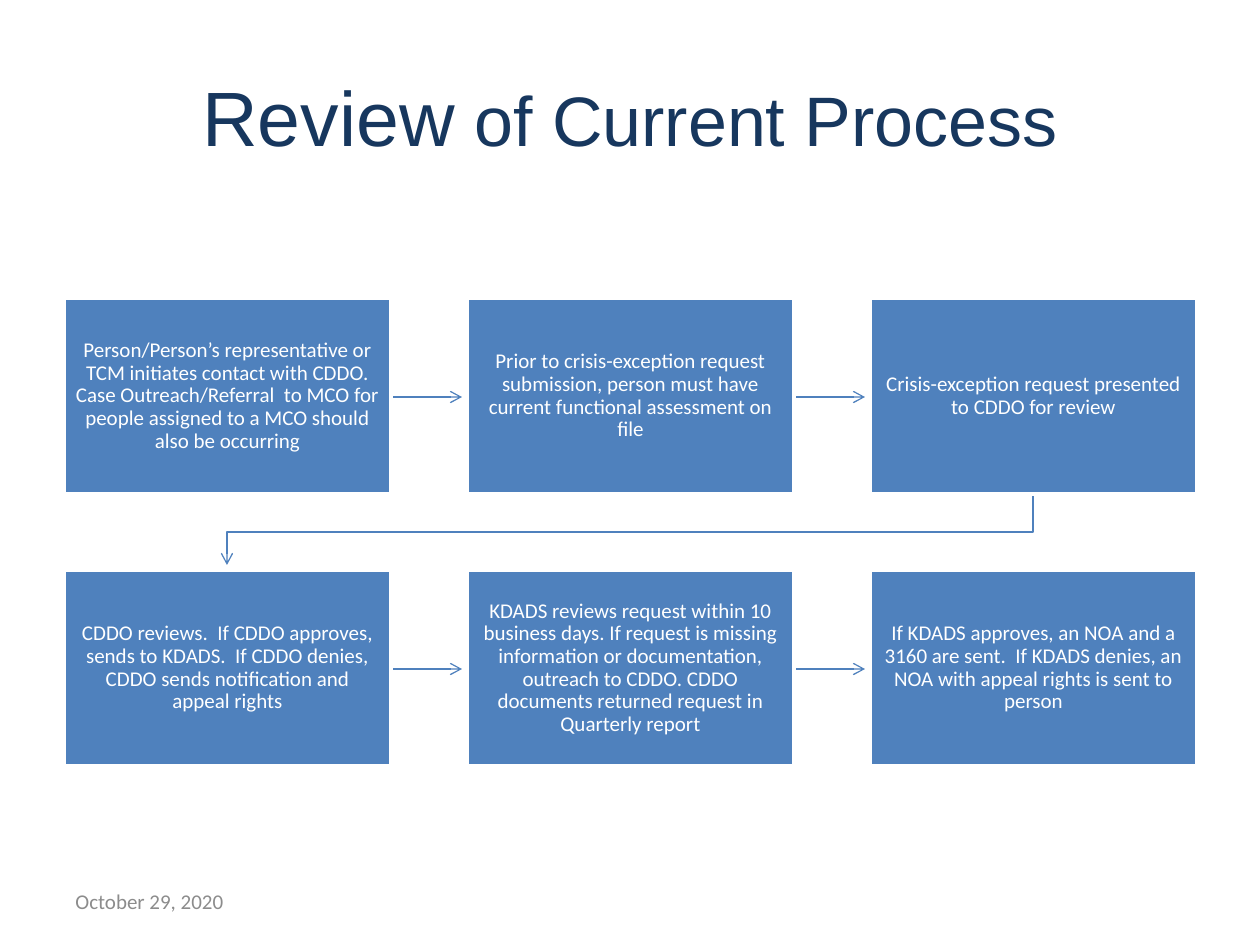
from dataclasses import dataclass

from pptx import Presentation
from pptx.dml.color import RGBColor
from pptx.enum.shapes import MSO_CONNECTOR as Connector, MSO_SHAPE as Shape
from pptx.enum.text import MSO_ANCHOR as Anchor, PP_ALIGN as Align
from pptx.oxml.ns import qn
from pptx.util import Emu, Pt
from lxml.etree import SubElement

PX_PER_INCH = 126
BLUE, NAVY, GREY, WHITE = "4F81BD", "17375E", "8C8C8C", "FFFFFF"

# Grid of steps, in px
COLUMNS = 3
LEFT, TOP = 64, 298
STEP_WIDTH, STEP_HEIGHT = 327, 196
COLUMN_PITCH, ROW_PITCH = 403, 272
ARROW_LENGTH = 71


@dataclass
class Step:
    index: int
    text: str

    @property
    def column(self) -> int:
        return self.index % COLUMNS

    @property
    def left(self) -> int:
        return LEFT + self.column * COLUMN_PITCH

    @property
    def top(self) -> int:
        return TOP + self.index // COLUMNS * ROW_PITCH

    @property
    def middle(self) -> int:
        return self.left + STEP_WIDTH // 2


STEP_TEXTS = [
    "Person/Person’s representative or TCM initiates contact with CDDO. "
    "Case Outreach/Referral  to MCO for people assigned to a MCO should also be occurring",
    "Prior to crisis-exception request submission, person must have "
    "current functional assessment on file",
    "Crisis-exception request presented to CDDO for review",
    "CDDO reviews.  If CDDO approves, sends to KDADS.  If CDDO denies, "
    "CDDO sends notification and appeal rights",
    "KDADS reviews request within 10 business days. If request is missing information "
    "or documentation, outreach to CDDO. CDDO documents returned request in Quarterly report",
    "If KDADS approves, an NOA and a 3160 are sent.  If KDADS denies, "
    "an NOA with appeal rights is sent to person",
]


def px(length: int) -> Emu:
    return Emu(round(length * 914400 / PX_PER_INCH))


def color(value: str) -> RGBColor:
    return RGBColor.from_string(value)


def add_span(para, text: str, *, size: int, fill: str, font: str = "Calibri") -> None:
    span = para.add_run()
    span.text = text
    span.font.size = Pt(size)
    span.font.name = font
    span.font.color.rgb = color(fill)


def prepare_frame(frame, align: Align):
    frame.word_wrap = True
    frame.vertical_anchor = Anchor.MIDDLE
    para = frame.paragraphs[0]
    para.alignment = align
    return para


def add_text_box(page, left: int, top: int, width: int, height: int, align: Align):
    box = page.shapes.add_textbox(px(left), px(top), px(width), px(height))
    return prepare_frame(box.text_frame, align)


def style_arrow(arrow) -> None:
    arrow.line.color.rgb = color(BLUE)
    arrow.line.width = Pt(0.75)
    properties = arrow.element.spPr
    SubElement(properties.find(qn("a:ln")), qn("a:tailEnd"), type="arrow")
    if properties.find(qn("a:effectLst")) is None:
        SubElement(properties, qn("a:effectLst"))


def add_straight_arrow(page, step: Step) -> None:
    start = step.left + STEP_WIDTH
    y = px(step.top + STEP_HEIGHT // 2 + 1)
    style_arrow(page.shapes.add_connector(
        Connector.STRAIGHT, px(start), y, px(start + ARROW_LENGTH), y))


def add_row_arrow(page, source: Step, target: Step) -> None:
    bottom = source.top + STEP_HEIGHT
    bend = (bottom + target.top) // 2
    points = [(source.middle, bend), (target.middle, bend), (target.middle, target.top - 5)]
    builder = page.shapes.build_freeform(px(source.middle), px(bottom))
    builder.add_line_segments([(px(x), px(y)) for x, y in points], close=False)
    arrow = builder.convert_to_shape()
    arrow.fill.background()
    style_arrow(arrow)


def add_step(page, step: Step) -> None:
    box = page.shapes.add_shape(
        Shape.RECTANGLE, px(step.left), px(step.top), px(STEP_WIDTH), px(STEP_HEIGHT))
    box.shadow.inherit = False
    box.fill.solid()
    box.fill.fore_color.rgb = color(BLUE)
    box.line.color.rgb = color(WHITE)
    box.line.width = Pt(2)
    frame = box.text_frame
    frame.margin_left = frame.margin_right = px(11)
    frame.margin_top = frame.margin_bottom = px(11)
    para = prepare_frame(frame, Align.CENTER)
    para.line_spacing = 0.9
    para.space_after = Pt(4.2)
    add_span(para, step.text, size=12, fill=WHITE)


def main() -> None:
    deck = Presentation()
    deck.slide_width, deck.slide_height = px(1260), px(945)
    page = deck.slides.add_slide(deck.slide_layouts[6])

    # Date and title
    date = add_text_box(page, 63, 876, 294, 50, Align.LEFT)
    add_span(date, "October 29, 2020", size=12, fill=GREY)
    title = add_text_box(page, 63, 63, 1134, 106, Align.CENTER)
    add_span(title, "Review", size=44, fill=NAVY, font="Arial")
    add_span(title, " of Current Process", size=40, fill=NAVY, font="Arial")

    # Process steps, each behind its own arrow to the next
    steps = [Step(index, text) for index, text in enumerate(STEP_TEXTS)]
    for step, following in zip(steps, steps[1:]):
        if following.column:
            add_straight_arrow(page, step)
        else:
            add_row_arrow(page, step, following)
    for step in steps:
        add_step(page, step)

    deck.save("out.pptx")


if __name__ == "__main__":
    main()
